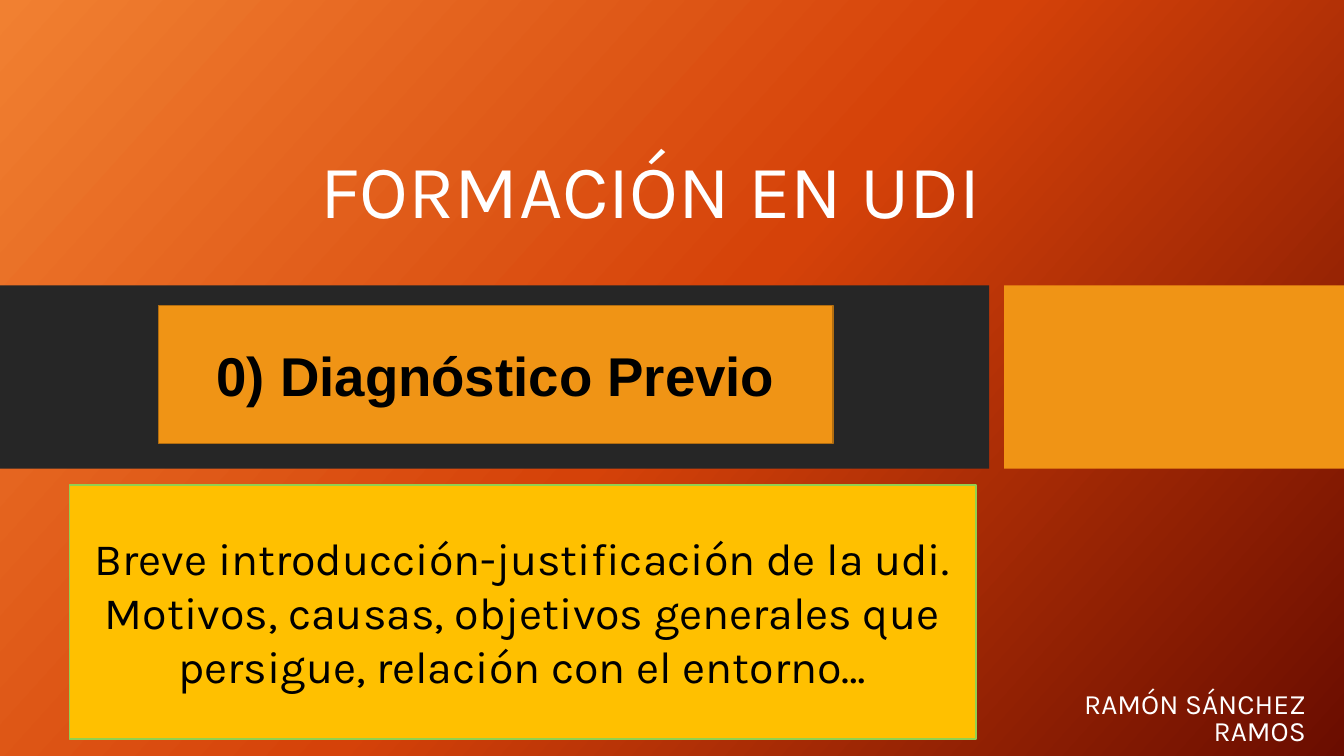
from copy import deepcopy

from pptx import Presentation
from pptx.dml.color import RGBColor
from pptx.enum.shapes import MSO_SHAPE
from pptx.enum.text import MSO_ANCHOR, PP_ALIGN
from pptx.oxml.ns import qn
from pptx.util import Inches, Pt

RECTANGLE = MSO_SHAPE.RECTANGLE
TOP, MIDDLE, BOTTOM = MSO_ANCHOR.TOP, MSO_ANCHOR.MIDDLE, MSO_ANCHOR.BOTTOM
CENTER, RIGHT = PP_ALIGN.CENTER, PP_ALIGN.RIGHT
SLIDE_WIDTH, SLIDE_HEIGHT = 13.33, 7.5
ORANGE = "F09415"


def color(value):
    return RGBColor.from_string(value)


def paint_background(page, colors, angle):
    fill = page.background.fill
    fill.gradient()
    fill.gradient_angle = 360 - angle
    stop_list = next(page.element.iter(qn("a:gsLst")))
    stop_list.insert(1, deepcopy(stop_list[0]))
    for index, (stop, value) in enumerate(zip(fill.gradient_stops, colors)):
        stop.position = index / (len(colors) - 1)
        stop.color.rgb = color(value)


def write(shape, text, size, font, ink, align, anchor, bold=False, spacing=None):
    frame = shape.text_frame
    frame.word_wrap = True
    frame.vertical_anchor = anchor
    para = frame.paragraphs[0]
    para.text = text
    para.alignment = align
    para.line_spacing = spacing
    para.font.name = font
    para.font.size = Pt(size)
    para.font.bold = bold
    para.font.color.rgb = color(ink)


def add_panel(page, box, fill, line=None):
    panel = page.shapes.add_shape(RECTANGLE, *map(Inches, box))
    panel.shadow.inherit = False
    panel.fill.solid()
    panel.fill.fore_color.rgb = color(fill)
    if line:
        panel.line.color.rgb = color(line)
        panel.line.width = Pt(1)
    else:
        panel.line.fill.background()
    return panel


def add_band(page, box, gap=0.15, accent_width=3.37):
    left, top, width, height = box
    dark_width = width - gap - accent_width
    add_panel(page, (left, top, dark_width, height), "262626")
    accent_left = left + dark_width + gap
    add_panel(page, (accent_left, top, accent_width, height), ORANGE)


def add_heading(page, box, text, size, anchor, spacing):
    heading = page.shapes.add_textbox(*map(Inches, box))
    write(heading, text, size, "Karla", "FFFFFF", RIGHT, anchor, spacing=spacing)


def add_card(page, box, fill, line, text, size, font, bold=False):
    card = add_panel(page, box, fill, line)
    write(card, text, size, font, "000000", CENTER, MIDDLE, bold)


def build_title_slide(deck):
    page = deck.slides.add_slide(deck.slide_layouts[6])
    paint_background(page, ("F18031", "D54209", "6A0D00"), 42)
    add_band(page, (0, 2.83, SLIDE_WIDTH, 1.82))
    add_heading(page, (0.92, 0.88, 8.91, 1.5), "FORMACIÓN EN UDI", 54, BOTTOM, 0.9)
    add_heading(page, (9.68, 6.83, 3.37, 0.37), "RAMÓN SÁNCHEZ RAMOS", 20, TOP, 0.8)
    add_card(page, (1.57, 3.03, 6.69, 1.37), ORANGE, "B26D10",
             "0) Diagnóstico Previo", 39, "Arial", bold=True)
    add_card(page, (0.69, 4.81, 8.99, 2.52), "FFC000", "92D050",
             "Breve introducción-justificación de la udi. Motivos, causas, "
             "objetivos generales que persigue, relación con el entorno…", 32, "Karla")


def main():
    deck = Presentation()
    deck.slide_width = Inches(SLIDE_WIDTH)
    deck.slide_height = Inches(SLIDE_HEIGHT)
    build_title_slide(deck)
    deck.save("out.pptx")


if __name__ == "__main__":
    main()
